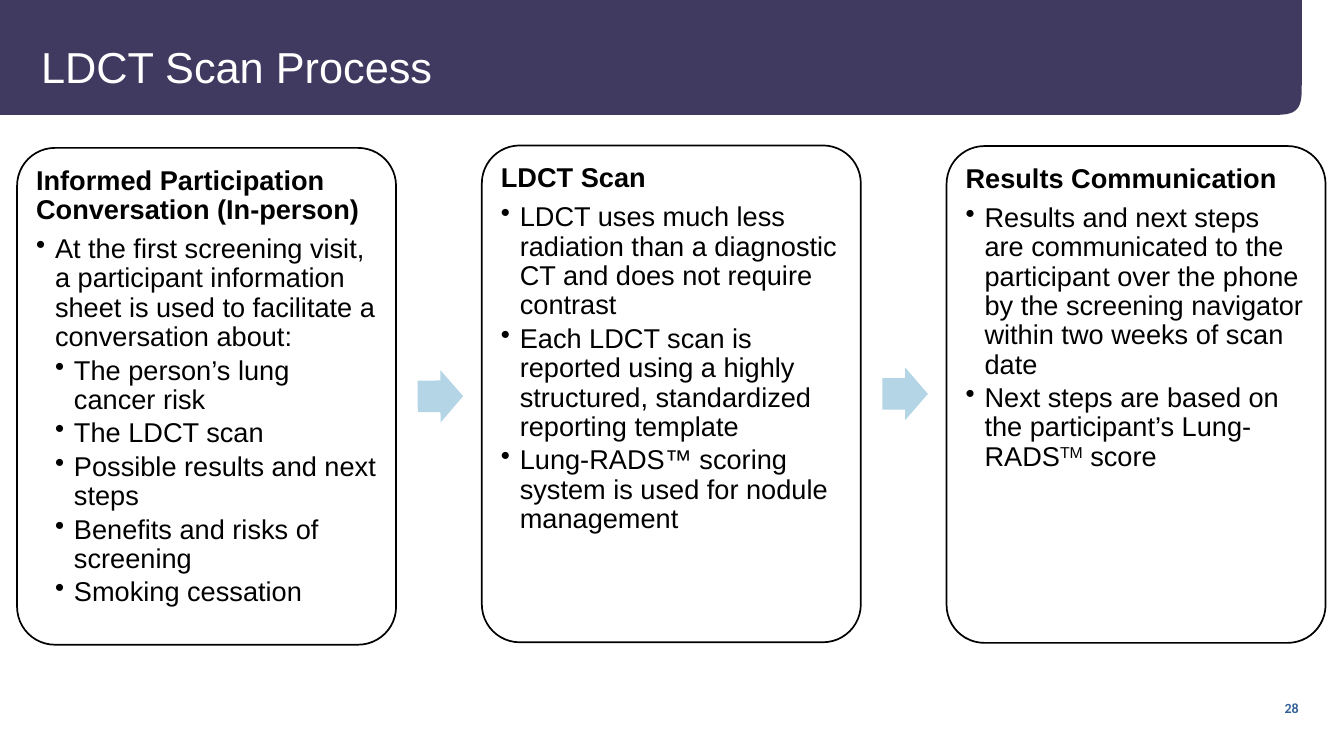
import math

import pptx
import pptx.util
from lxml import etree
from pptx.dml.color import RGBColor
from pptx.enum.shapes import MSO_SHAPE
from pptx.enum.text import MSO_ANCHOR, PP_ALIGN
from pptx.oxml.ns import qn

PURPLE = RGBColor(0x40, 0x3A, 0x60)
PALE_BLUE = RGBColor(0xB4, 0xD5, 0xE6)
PAGE_BLUE = RGBColor(0x32, 0x62, 0x95)
WHITE = RGBColor(0xFF, 0xFF, 0xFF)
BLACK = RGBColor(0, 0, 0)

SLIDE_WIDTH = pptx.util.Inches(21.99)
SLIDE_HEIGHT = pptx.util.Inches(12.37)
CARD_LEFT, CARD_PITCH, CARD_WIDTH, CARD_HEIGHT = 1.27, 34.58, 28.2, 65.72
ARROW_GAP, ARROW_WIDTH, ARROW_HEIGHT = 1.61, 3.38, 6.95
CARD_FONT_SIZE = 32

STEPS = [
    (19.56, "Informed Participation Conversation (In-person)", [
        (1, "At the first screening visit, a participant information sheet is used to facilitate a conversation about:"),
        (2, "The person’s lung cancer risk"),
        (2, "The LDCT scan"),
        (2, "Possible results and next steps"),
        (2, "Benefits and risks of screening"),
        (2, "Smoking cessation"),
    ]),
    (19.24, "LDCT Scan", [
        (1, "LDCT uses much less radiation than a diagnostic CT and does not require contrast"),
        (1, "Each LDCT scan is reported using a highly structured, standardized reporting template"),
        (1, "Lung-RADS™ scoring system is used for nodule management"),
    ]),
    (19.32, "Results Communication", [
        (1, "Results and next steps are communicated to the participant over the phone by the screening navigator within two weeks of scan date"),
        (1, "Next steps are based on the participant’s Lung-RADS^TM^ score"),
    ]),
]


def columns(count):
    return round(SLIDE_WIDTH * count / 100)


def rows(count):
    return round(SLIDE_HEIGHT * count / 100)


def grid_box(left, top, width, height):
    return columns(left), rows(top), columns(width), rows(height)


def set_margins(text_frame, margin):
    text_frame.margin_left = text_frame.margin_right = margin
    text_frame.margin_top = text_frame.margin_bottom = margin


def set_font(paragraph, name, size, color, bold=False):
    paragraph.font.name = name
    paragraph.font.size = pptx.util.Pt(size)
    paragraph.font.color.rgb = color
    paragraph.font.bold = bold


def add_header(slide, box, text):
    left, top, width, height = box
    radius = columns(2.5)
    corner = []
    for step in range(13):
        angle = math.pi / 2 * (1 - step / 12)
        x = left + width - radius + radius * abs(math.cos(angle)) ** 0.5
        y = top + height - radius + radius * abs(math.sin(angle)) ** 0.5
        corner.append((round(x), round(y)))
    builder = slide.shapes.build_freeform(left, top)
    builder.add_line_segments([(left, top + height), *corner, (left + width, top)])
    band = builder.convert_to_shape()
    band.shadow.inherit = False
    band.fill.solid()
    band.fill.fore_color.rgb = PURPLE
    band.line.fill.background()

    title = slide.shapes.title
    title.left, title.top, title.width, title.height = (
        left + columns(3.05), top + rows(5.34), columns(93.86), rows(6.95))
    band._element.addnext(title._element)
    text_frame = title.text_frame
    text_frame.text = text
    text_frame.vertical_anchor = MSO_ANCHOR.MIDDLE
    set_margins(text_frame, 0)
    paragraph = text_frame.paragraphs[0]
    paragraph.alignment = PP_ALIGN.LEFT
    set_font(paragraph, "Arial", 51, WHITE)


def add_card_paragraph(paragraph, text, level, space_share):
    paragraph.alignment = PP_ALIGN.LEFT
    paragraph.line_spacing = 0.9
    paragraph.space_after = pptx.util.Pt(CARD_FONT_SIZE * space_share)
    if level:
        indent = columns(1.41)
        properties = paragraph._p.get_or_add_pPr()
        properties.set("marL", str(indent * level))
        properties.set("indent", str(-indent))
        etree.SubElement(properties, qn("a:buChar")).set("char", "•")
    set_font(paragraph, "Arial", CARD_FONT_SIZE, BLACK, bold=level == 0)
    for index, part in enumerate(text.split("^")):
        run = paragraph.add_run()
        run.text = part
        if index % 2:
            run._r.get_or_add_rPr().set("baseline", "30000")


def add_card(slide, box, heading, bullets):
    card = slide.shapes.add_shape(MSO_SHAPE.ROUNDED_RECTANGLE, *box)
    card.adjustments[0] = 0.1
    card.shadow.inherit = False
    card.fill.solid()
    card.fill.fore_color.rgb = WHITE
    card.line.color.rgb = BLACK
    card.line.width = pptx.util.Pt(2)
    text_frame = card.text_frame
    text_frame.word_wrap = True
    text_frame.vertical_anchor = MSO_ANCHOR.TOP
    set_margins(text_frame, columns(0.59))
    add_card_paragraph(text_frame.paragraphs[0], heading, 0, 0.35)
    for level, text in bullets:
        add_card_paragraph(text_frame.add_paragraph(), text, level, 0.15)


def add_arrow(slide, box, rotation):
    arrow = slide.shapes.add_shape(MSO_SHAPE.RIGHT_ARROW, *box)
    arrow.adjustments[0] = 0.6
    arrow.adjustments[1] = 0.5
    arrow.rotation = rotation
    arrow.shadow.inherit = False
    arrow.fill.solid()
    arrow.fill.fore_color.rgb = PALE_BLUE
    arrow.line.fill.background()


def add_process(slide):
    for index, (top, heading, bullets) in enumerate(STEPS):
        left = CARD_LEFT + index * CARD_PITCH
        add_card(slide, grid_box(left, top, CARD_WIDTH, CARD_HEIGHT), heading, bullets)
        if index + 1 < len(STEPS):
            rise = rows(STEPS[index + 1][0] - top)
            rotation = math.degrees(math.atan2(rise, columns(CARD_PITCH)))
            arrow_left = left + CARD_WIDTH + ARROW_GAP
            arrow_top = top + (CARD_HEIGHT - ARROW_HEIGHT) / 2
            add_arrow(slide, grid_box(arrow_left, arrow_top, ARROW_WIDTH, ARROW_HEIGHT), rotation)


def add_page_number(slide, box, number):
    text_frame = slide.shapes.add_textbox(*box).text_frame
    set_margins(text_frame, 0)
    text_frame.word_wrap = True
    text_frame.text = number
    set_font(text_frame.paragraphs[0], "Calibri", 16.5, PAGE_BLUE, bold=True)


def main():
    presentation = pptx.Presentation()
    presentation.slide_width = SLIDE_WIDTH
    presentation.slide_height = SLIDE_HEIGHT
    slide = presentation.slides.add_slide(presentation.slide_layouts[5])
    add_header(slide, grid_box(0, 0, 96.86, 15.2), "LDCT Scan Process")
    add_process(slide)
    add_page_number(slide, grid_box(95.59, 92.56, 1.41, 2.1), "28")
    presentation.save("out.pptx")


if __name__ == "__main__":
    main()
